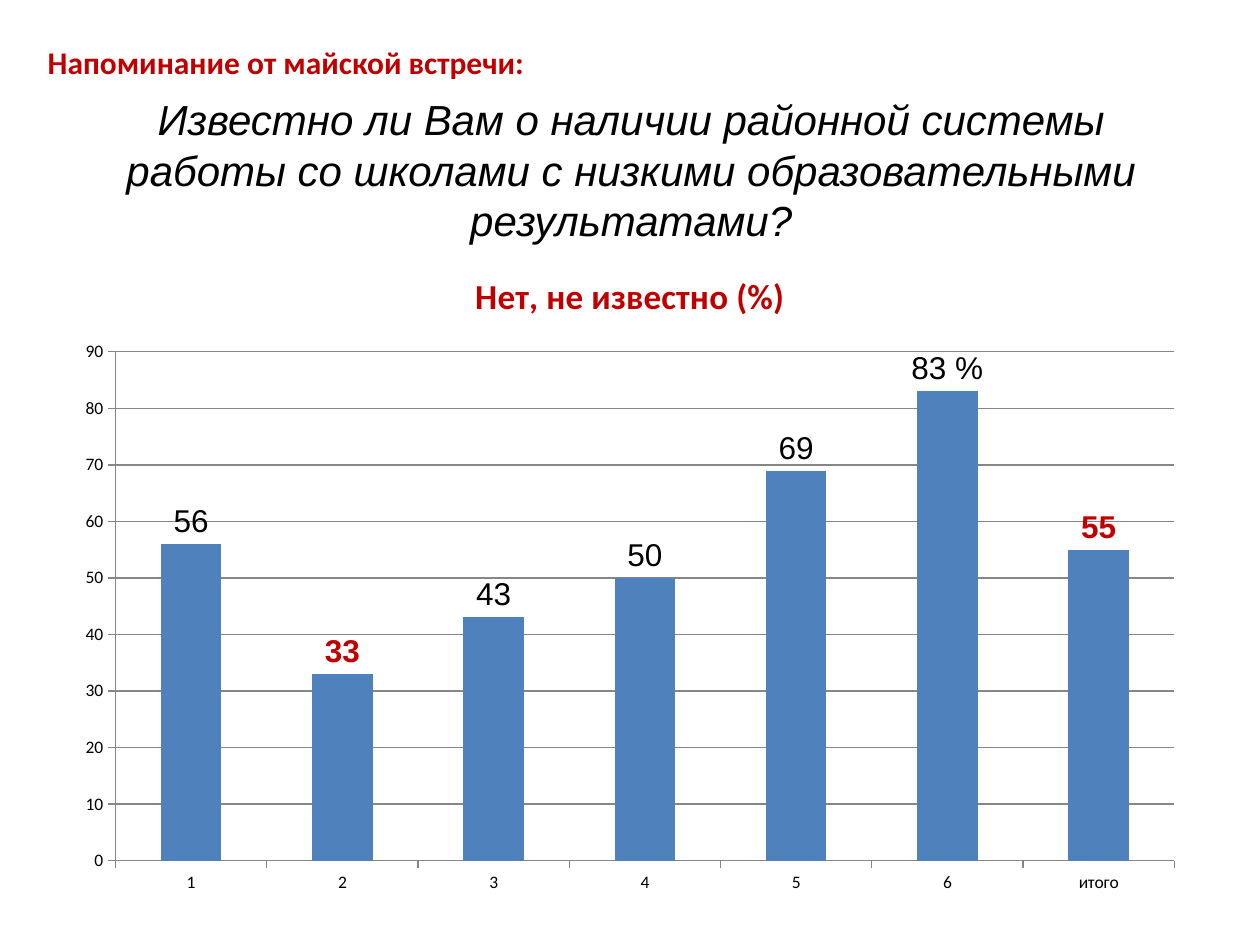
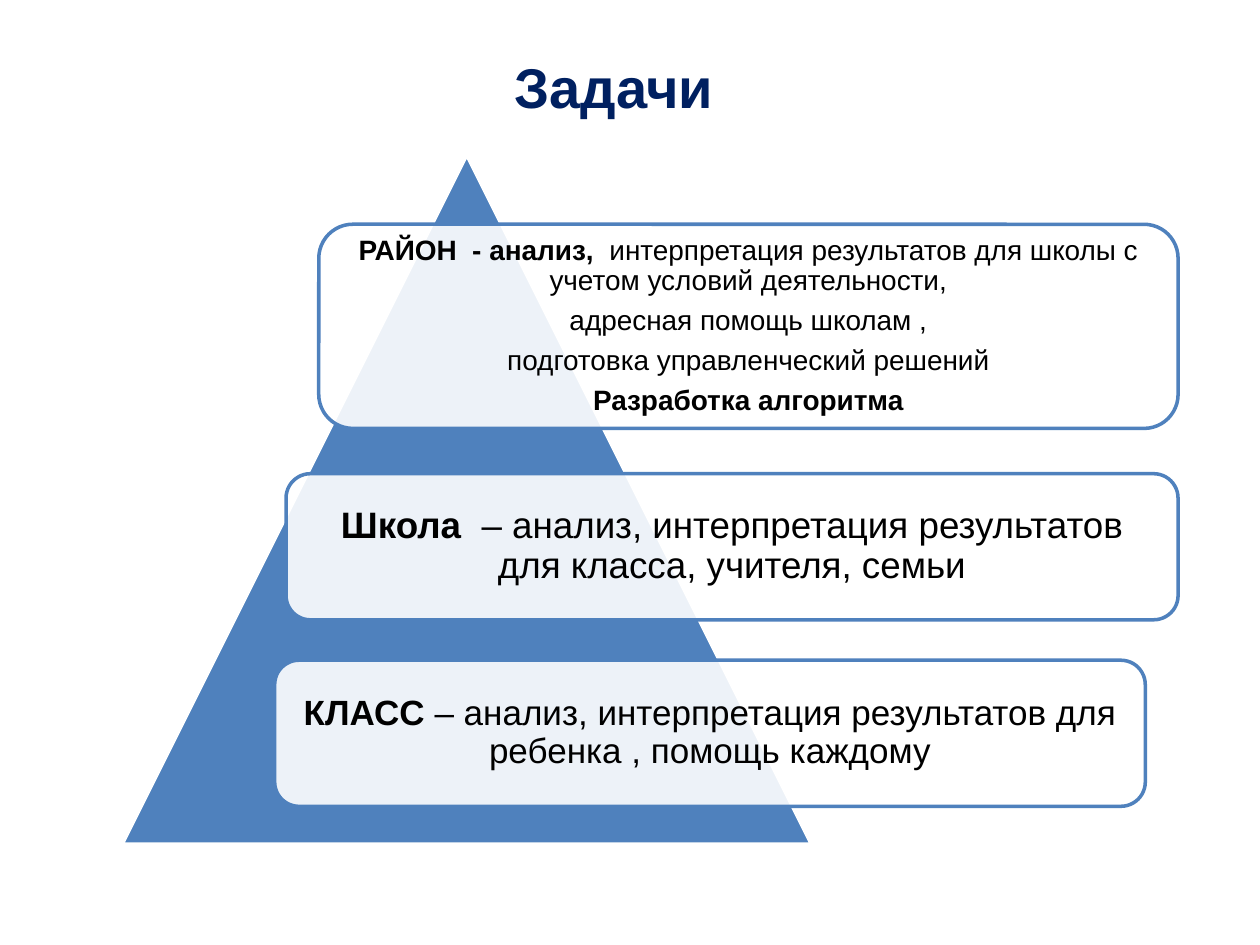
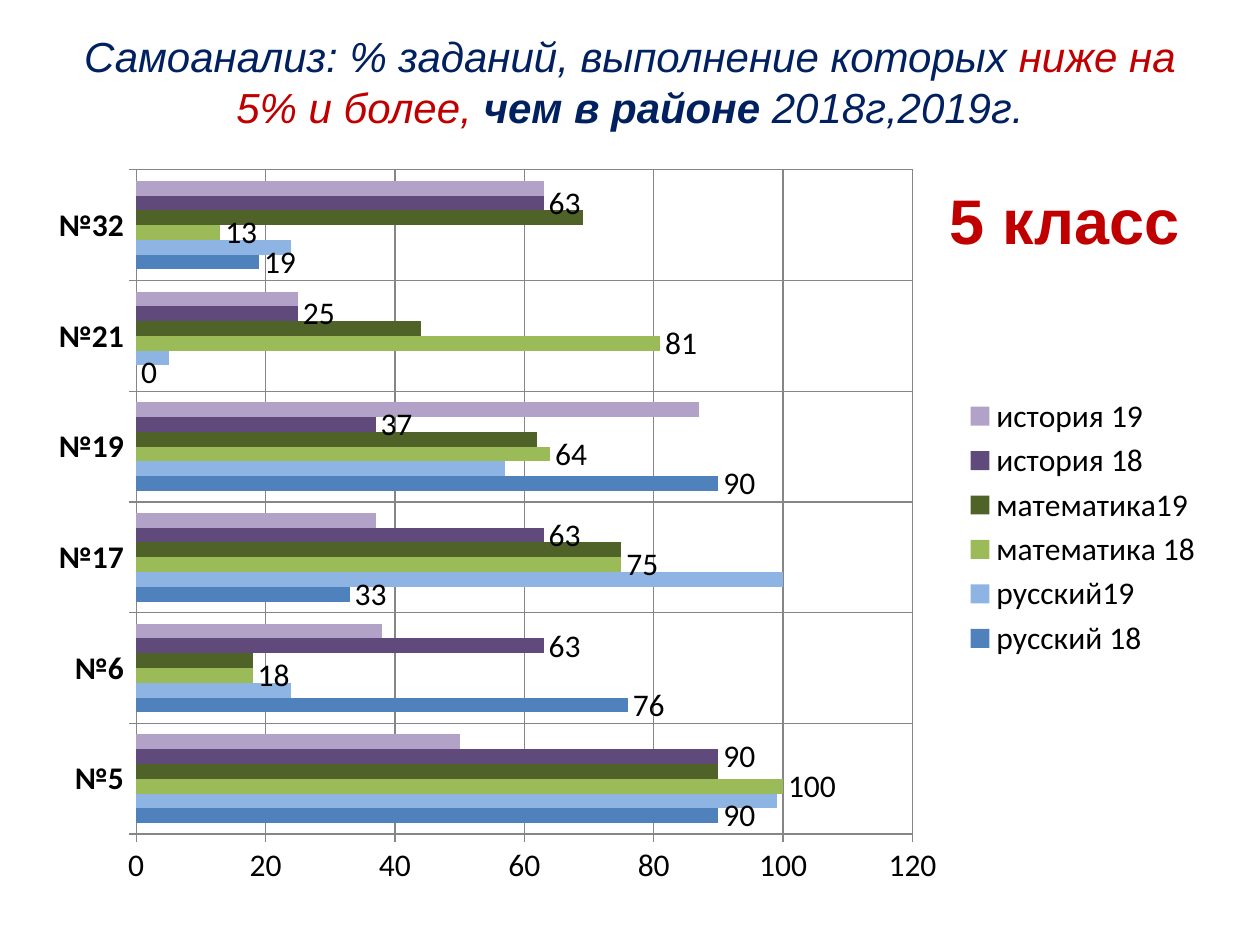
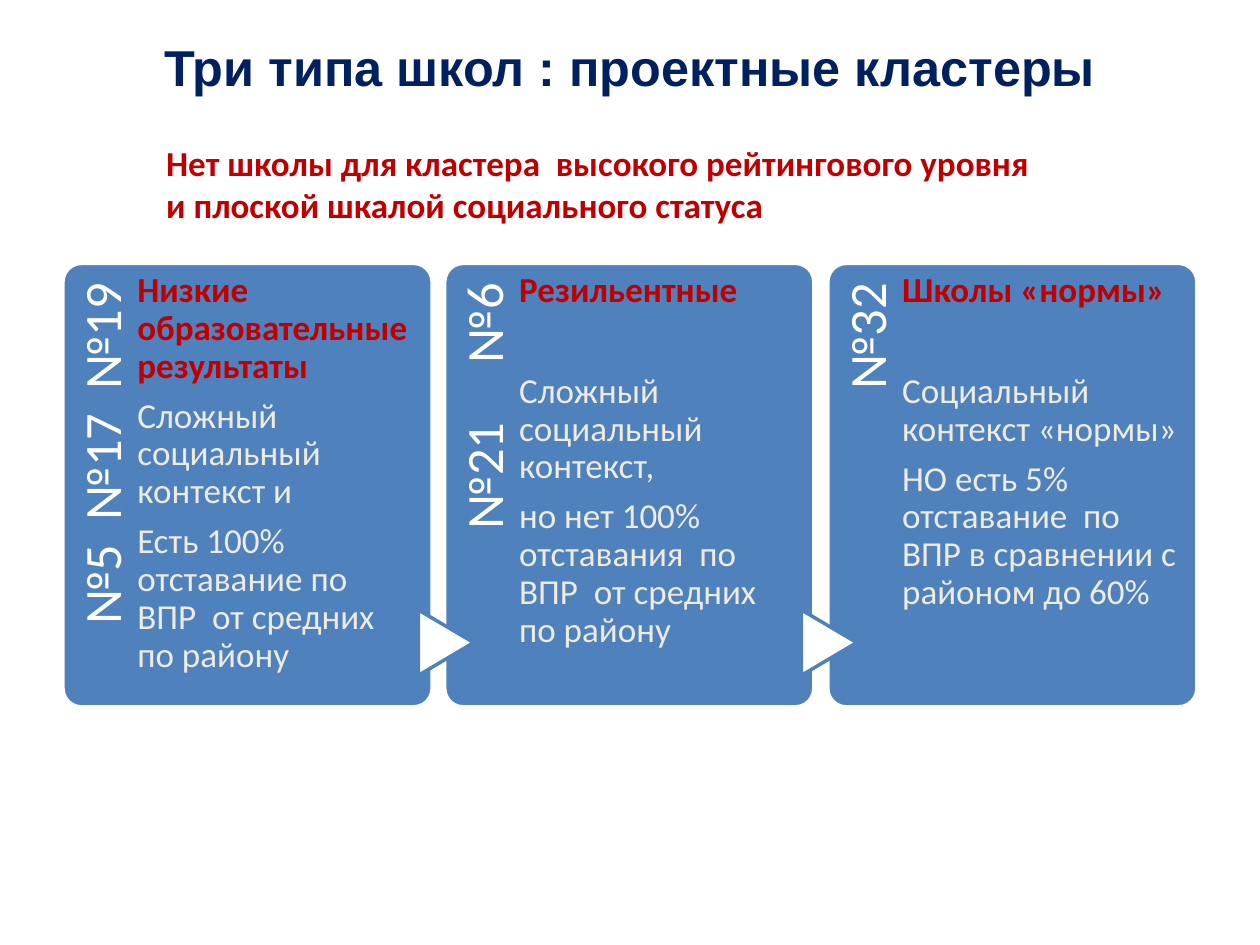
from lxml.etree import SubElement
from pptx import Presentation
from pptx.chart.data import CategoryChartData
from pptx.dml.color import RGBColor
from pptx.enum.chart import XL_CHART_TYPE, XL_LABEL_POSITION, XL_LEGEND_POSITION, XL_TICK_MARK
from pptx.enum.shapes import MSO_SHAPE
from pptx.enum.text import MSO_ANCHOR, MSO_AUTO_SIZE, PP_ALIGN
from pptx.oxml.ns import qn
from pptx.util import Pt

PX = 9144  # 100 px to the inch

BLACK = RGBColor(0x00, 0x00, 0x00)
WHITE = RGBColor(0xFF, 0xFF, 0xFF)
CREAM = RGBColor(0xEE, 0xEC, 0xE1)
RED = RGBColor(0xC0, 0x00, 0x00)
NAVY = RGBColor(0x00, 0x20, 0x60)
BLUE = RGBColor(0x4F, 0x81, 0xBD)
LIGHT_BLUE = RGBColor(0x8E, 0xB4, 0xE3)
GREEN = RGBColor(0x9B, 0xBB, 0x59)
DARK_GREEN = RGBColor(0x4F, 0x62, 0x28)
PURPLE = RGBColor(0x60, 0x4A, 0x7B)
LIGHT_PURPLE = RGBColor(0xB3, 0xA2, 0xC7)
GREY = RGBColor(0x86, 0x86, 0x86)

QUESTION = {"name": "Arial", "size": Pt(24), "italic": True, "color": BLACK}
HEADING = {"name": "Arial", "size": Pt(32), "bold": True, "color": NAVY}
NOTE = {"name": "Calibri", "size": Pt(20), "bold": True, "color": RED}
LEVEL = {"name": "Arial", "color": BLACK}
SCHOOL = {"name": "Calibri", "size": Pt(30), "color": WHITE}
CARD = {"name": "Calibri", "size": Pt(20), "color": CREAM}
BOLD = {"bold": True}


def apply_format(font, fmt):
    for name, value in fmt.items():
        if name == "color":
            font.color.rgb = value
        else:
            setattr(font, name, value)


class Deck:
    def __init__(self):
        self.prs = Presentation()
        self.prs.slide_width, self.prs.slide_height = 1000 * PX, 750 * PX
        self.s = None

    def slide(self):
        self.s = self.prs.slides.add_slide(self.prs.slide_layouts[6])

    def text(self, box, paragraphs, fmt, align=PP_ALIGN.LEFT, anchor=MSO_ANCHOR.TOP,
             insets=(10, 5, 10, 5), wrap=True, grow=False, tight=False, rotation=0, first_gap=0):
        """Paragraphs are strings or lists of (text, format) runs; first_gap is points
        added below the first paragraph."""
        sp = self.s.shapes.add_textbox(*(v * PX for v in box))
        sp.rotation = rotation
        tf = sp.text_frame
        frame = {"word_wrap": wrap, "vertical_anchor": anchor,
                 "auto_size": MSO_AUTO_SIZE.SHAPE_TO_FIT_TEXT if grow else MSO_AUTO_SIZE.NONE}
        for side, inset in zip(("left", "top", "right", "bottom"), insets):
            frame["margin_" + side] = inset * PX
        for name, value in frame.items():
            setattr(tf, name, value)
        for i, runs in enumerate(paragraphs):
            p = tf.add_paragraph() if i else tf.paragraphs[0]
            p.alignment = align
            if tight:
                p.line_spacing = 0.9
                p.space_after = Pt(fmt["size"].pt * 0.35 + (0 if i else first_gap))
            for words, extra in [(runs, {})] if isinstance(runs, str) else runs:
                r = p.add_run()
                r.text = words
                apply_format(r.font, fmt | extra)
        return sp

    def title(self, box, runs, fmt, insets=(10, 5, 10, 5)):
        self.text(box, [runs], fmt, PP_ALIGN.CENTER, MSO_ANCHOR.MIDDLE, insets)

    def shape(self, kind, box, fill, line, opacity=100, corner=None, rotation=0):
        sp = self.s.shapes.add_shape(kind, *(v * PX for v in box))
        sp.shadow.inherit = False
        sp.rotation = rotation
        sp.fill.solid()
        sp.fill.fore_color.rgb = fill
        sp.line.color.rgb = line
        sp.line.width = Pt(2)
        if corner:
            sp.adjustments[0] = corner
        if opacity < 100:
            color = sp.fill._xPr.find(qn("a:solidFill"))[0]
            SubElement(color, qn("a:alpha")).set("val", str(opacity * 1000))

    def chart(self, kind, box, categories, series, size, maximum, unit):
        """Series are (name, values, colour) tuples."""
        data = CategoryChartData()
        data.categories = categories
        for name, values, _ in series:
            data.add_series(name, values)
        chart = self.s.shapes.add_chart(kind, *(v * PX for v in box), data).chart
        apply_format(chart.font, {"name": "Calibri", "size": Pt(size), "color": BLACK})
        chart.has_legend = chart.has_title = False
        plot = chart.plots[0]
        plot.gap_width = 150
        plot.vary_by_categories = False
        for ser, (_, _, color) in zip(plot.series, series):
            ser.invert_if_negative = False
            ser.format.fill.solid()
            ser.format.fill.fore_color.rgb = color
        value_axis = chart.value_axis
        for name, value in {"minimum_scale": 0, "maximum_scale": maximum, "major_unit": unit,
                            "has_major_gridlines": True}.items():
            setattr(value_axis, name, value)
        value_axis.major_gridlines.format.line.color.rgb = GREY
        for axis in (value_axis, chart.category_axis):
            axis.major_tick_mark = XL_TICK_MARK.OUTSIDE
            axis.format.line.color.rgb = GREY
        return chart

    def value_labels(self, ser, fmt):
        labels = ser.data_labels
        labels.show_value = True
        labels.position = XL_LABEL_POSITION.OUTSIDE_END
        apply_format(labels.font, fmt)


def survey_slide(deck):
    deck.slide()
    deck.title((51, 76, 900, 117), "Известно ли Вам о наличии районной системы работы со школами "
               "с низкими образовательными результатами?", QUESTION)
    heading = "Нет, не известно (%)"
    chart = deck.chart(XL_CHART_TYPE.COLUMN_CLUSTERED, (50, 194, 900, 525),
                       ["1", "2", "3", "4", "5", "6", "итого"],
                       [(heading, (56, 33, 43, 50, 69, 83, 55), BLUE)], 10, 90, 10)
    chart.has_title = True
    chart.chart_title.include_in_layout = False
    r = chart.chart_title.text_frame.paragraphs[0].add_run()
    r.text = heading
    apply_format(r.font, NOTE)
    label_format = {"name": "Arial", "size": Pt(18), "color": BLACK}
    ser = chart.plots[0].series[0]
    deck.value_labels(ser, label_format)
    red_bold = {"bold": True, "color": RED}
    for index, words, extra in ((1, "33", red_bold), (5, "83 %", {}), (6, "55", red_bold)):
        label = ser.points[index].data_label
        r = label.text_frame.paragraphs[0].add_run()
        r.text = words
        apply_format(r.font, label_format | extra)
        label.position = XL_LABEL_POSITION.OUTSIDE_END
    deck.text((28, 29, 408, 40), ["Напоминание от майской встречи:"], NOTE | {"size": Pt(18)},
              wrap=False, grow=True)


def tasks_slide(deck):
    deck.slide()
    deck.title((50, 30, 900, 77), "Задачи", HEADING, insets=(10, 5, 35, 5))
    deck.shape(MSO_SHAPE.ISOSCELES_TRIANGLE, (97, 123, 547, 547), BLUE, WHITE)
    levels = [
        ((253, 178, 682, 162), 8, 7, 16,
         [[("РАЙОН  - анализ,  ", BOLD),
           ("интерпретация результатов для школы с учетом условий деятельности,", {})],
          "адресная помощь школам ,",
          "подготовка управленческий решений",
          [("Разработка алгоритма", BOLD)]]),
        ((227, 376, 708, 116), 6, 9, 21,
         [[("Школа ", BOLD),
           (" – анализ, интерпретация результатов для класса, учителя, семьи", {})]]),
        ((218, 524, 691, 116), 6, 8, 20,
         [[("КЛАСС", BOLD),
           (" – анализ, интерпретация результатов для ребенка , помощь каждому", {})]]),
    ]
    for box, pad, inset, size, paragraphs in levels:
        deck.shape(MSO_SHAPE.ROUNDED_RECTANGLE, box, WHITE, BLUE, opacity=90)
        x, y, w, h = box
        deck.text((x + pad, y + pad, w - 2 * pad, h - 2 * pad), paragraphs,
                  LEVEL | {"size": Pt(size)}, PP_ALIGN.CENTER, MSO_ANCHOR.MIDDLE,
                  (inset,) * 4, tight=True)


def self_analysis_slide(deck):
    deck.slide()
    deck.title((50, 30, 900, 69),
               [("Самоанализ: % заданий, выполнение которых ", {}),
                ("ниже на 5% и более, ", {"color": RED}),
                ("чем в районе ", BOLD), ("2018г,2019г.", {})],
               QUESTION | {"color": NAVY})
    series = [
        ("русский 18", (90, 76, 33, 90, 0, 19), BLUE),
        ("русский19", (99, 24, 100, 57, 5, 24), LIGHT_BLUE),
        ("математика 18", (100, 18, 75, 64, 81, 13), GREEN),
        ("математика19", (90, 18, 75, 62, 44, 69), DARK_GREEN),
        ("история 18", (90, 63, 63, 37, 25, 63), PURPLE),
        ("история 19", (50, 38, 37, 87, 25, 63), LIGHT_PURPLE),
    ]
    chart = deck.chart(XL_CHART_TYPE.BAR_CLUSTERED, (28, 123, 937, 591),
                       ["№5", "№6", "№17", "№19", "№21", "№32"], series, 18, 120, 20)
    axis = chart.category_axis
    axis.tick_labels.font.bold = True
    axis.has_major_gridlines = True
    axis.major_gridlines.format.line.color.rgb = GREY
    chart.has_legend = True
    chart.legend.position = XL_LEGEND_POSITION.RIGHT
    chart.legend.include_in_layout = False
    for ser in list(chart.plots[0].series)[::2]:
        deck.value_labels(ser, {"name": "Calibri", "size": Pt(18), "color": BLACK})
    deck.text((744, 139, 204, 71), ["5 класс"], HEADING | {"size": Pt(36), "color": RED},
              wrap=False, grow=True)


def clusters_slide(deck):
    deck.slide()
    deck.title((50, 30, 900, 46), "Три типа школ : проектные кластеры",
               HEADING | {"size": Pt(28.8)})
    cards = [
        ("№5  №17  №19", 0, "Низкие образовательные результаты",
         ["Сложный социальный контекст и",
          "Есть 100% отставание по ВПР  от средних по району"]),
        ([("№21", {}), (" ", {}), ("№6", {})], 29, "Резильентные",
         ["Сложный социальный контекст,",
          "но нет 100% отставания  по ВПР  от средних по району"]),
        ("№32", 29, "Школы «нормы»",
         ["Социальный контекст «нормы»",
          "НО есть 5% отставание  по ВПР в сравнении с районом до 60%"]),
    ]
    for i, (schools, gap, heading, body) in enumerate(cards):
        x = 50 + i * 607 // 2
        deck.shape(MSO_SHAPE.ROUNDED_RECTANGLE, (x, 209, 293, 352), BLUE, WHITE, corner=0.05)
        sp = deck.text((x - 115, 324, 288, 59), [schools], SCHOOL, PP_ALIGN.RIGHT,
                       insets=(0, 11, 15, 0), tight=True, rotation=270)
        for r in sp.text_frame.paragraphs[0].runs:
            if r.text == " ":  # wide gap between two schools
                r.font._element.set("spc", "2700")
        if i:
            deck.shape(MSO_SHAPE.FLOWCHART_EXTRACT, (x - 25, 488, 52, 44), WHITE, BLUE,
                       rotation=90)
        deck.text((x + 59, 209, 218, 352), [[(heading, NOTE)], *body], CARD,
                  insets=(0, 7, 0, 0), tight=True, first_gap=gap)
    deck.text((122, 107, 762, 77), ["Нет школы для кластера  высокого рейтингового уровня",
                                    "и плоской шкалой социального статуса"], NOTE, grow=True)


def main():
    deck = Deck()
    for build in (survey_slide, tasks_slide, self_analysis_slide, clusters_slide):
        build(deck)
    deck.prs.save("out.pptx")


if __name__ == "__main__":
    main()
